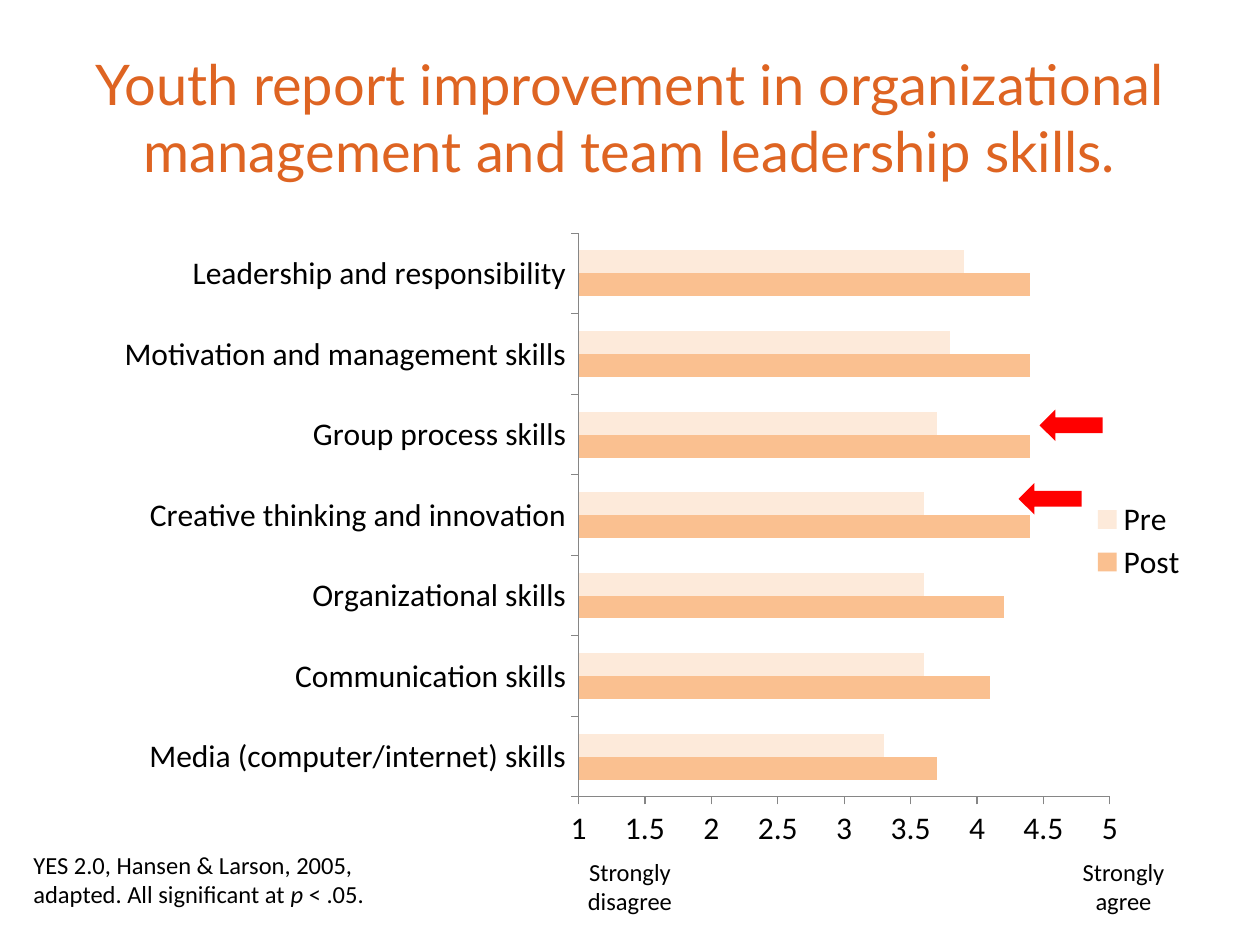
"""Build a slide comparing youth skill ratings before and after a program."""
from lxml import etree
from pptx import Presentation
from pptx.chart.data import CategoryChartData
from pptx.dml.color import RGBColor
from pptx.enum.chart import XL_CHART_TYPE, XL_LEGEND_POSITION, XL_TICK_MARK
from pptx.enum.shapes import MSO_SHAPE
from pptx.enum.text import MSO_ANCHOR, MSO_AUTO_SIZE, PP_ALIGN
from pptx.oxml.ns import qn
from pptx.util import Pt

BAR_CLUSTERED = XL_CHART_TYPE.BAR_CLUSTERED
LEGEND_RIGHT = XL_LEGEND_POSITION.RIGHT
TICK_OUTSIDE, TICK_NONE = XL_TICK_MARK.OUTSIDE, XL_TICK_MARK.NONE
RIGHT_ARROW = MSO_SHAPE.RIGHT_ARROW
TOP, MIDDLE = MSO_ANCHOR.TOP, MSO_ANCHOR.MIDDLE
FIT_SHAPE, FIT_NONE = MSO_AUTO_SIZE.SHAPE_TO_FIT_TEXT, MSO_AUTO_SIZE.NONE
LEFT, CENTER = PP_ALIGN.LEFT, PP_ALIGN.CENTER

ORANGE = RGBColor(0xDE, 0x64, 0x22)
BLACK = RGBColor(0, 0, 0)
RED = RGBColor(0xFF, 0, 0)
GRAY = RGBColor(0x86, 0x86, 0x86)
POST_COLOR = RGBColor(0xFA, 0xC0, 0x90)
PRE_COLOR = RGBColor(0xFD, 0xEA, 0xDA)

TITLE_FONT = {"name": "Lato", "size": Pt(32)}
NOTE_FONT = {"name": "Calibri", "size": Pt(14)}
CHART_FONT = {"name": "Calibri", "size": Pt(18)}

TITLE = "Youth report improvement in organizational management and team leadership skills."
TEXTS = [
    ((36, 21.6, 648, 90), [(TITLE, False)], TITLE_FONT, ORANGE, CENTER, MIDDLE, FIT_NONE),
    ((318, 486, 84, 41), [("Strongly disagree", False)], NOTE_FONT, BLACK, CENTER, TOP, FIT_SHAPE),
    ((600, 486, 84, 41), [("Strongly agree", False)], NOTE_FONT, BLACK, CENTER, TOP, FIT_SHAPE),
    ((12, 482, 240, 58),
     [("YES 2.0, Hansen & Larson, 2005, adapted. All significant at ", False),
      ("p", True), (" < .05.", False)],
     NOTE_FONT, BLACK, LEFT, TOP, FIT_SHAPE),
]
RATINGS = [
    ("Media (computer/internet) skills", 3.7, 3.3),
    ("Communication skills", 4.1, 3.6),
    ("Organizational skills", 4.2, 3.6),
    ("Creative thinking and innovation", 4.4, 3.6),
    ("Group process skills", 4.4, 3.7),
    ("Motivation and management skills", 4.4, 3.8),
    ("Leadership and responsibility", 4.4, 3.9),
]
SERIES = [("Post", POST_COLOR), ("Pre", PRE_COLOR)]
CHART_BOX = (60, 126, 660, 366)
PLOT_LAYOUT = {"layoutTarget": "inner", "xMode": "edge", "yMode": "edge",
               "x": 0.41, "y": 0.02, "w": 0.46, "h": 0.88}
LEGEND_LAYOUT = {"xMode": "edge", "yMode": "edge",
                 "x": 0.85, "y": 0.43, "w": 0.09, "h": 0.14}
ARROWS = [(582, 276), (594, 234)]
ARROW_SIZE = (36, 18)


def points(values):
    return [Pt(value) for value in values]


def apply_font(font, values, color):
    for name, value in values.items():
        setattr(font, name, value)
    font.color.rgb = color


def add_text(slide, box, runs, font_values, color, alignment, anchor, auto_size):
    frame = slide.shapes.add_textbox(*points(box)).text_frame
    frame.word_wrap = True
    frame.auto_size = auto_size
    frame.vertical_anchor = anchor
    paragraph = frame.paragraphs[0]
    paragraph.alignment = alignment
    for text, italic in runs:
        run = paragraph.add_run()
        run.text = text
        apply_font(run.font, font_values, color)
        run.font.italic = italic


def set_layout(element, position, values):
    for existing in element.findall(qn("c:layout")):
        element.remove(existing)
    layout = etree.Element(qn("c:layout"))
    manual = etree.SubElement(layout, qn("c:manualLayout"))
    for name, value in values.items():
        etree.SubElement(manual, qn(f"c:{name}")).set("val", str(value))
    element.insert(position, layout)


def add_ratings_chart(slide):
    categories, *columns = zip(*RATINGS)
    data = CategoryChartData()
    data.categories = categories
    for (name, _), values in zip(SERIES, columns):
        data.add_series(name, values)
    chart = slide.shapes.add_chart(BAR_CLUSTERED, *points(CHART_BOX), data).chart
    apply_font(chart.font, CHART_FONT, BLACK)
    chart.has_title = False
    plot = chart.plots[0]
    plot.gap_width = 150
    plot.vary_by_categories = False
    for series, (_, color) in zip(plot.series, SERIES):
        series.format.fill.solid()
        series.format.fill.fore_color.rgb = color
    for axis in (chart.category_axis, chart.value_axis):
        axis.has_major_gridlines = False
        axis.major_tick_mark = TICK_OUTSIDE
        axis.minor_tick_mark = TICK_NONE
        axis.format.line.color.rgb = GRAY
        axis.format.line.width = Pt(0.75)
    value_axis = chart.value_axis
    value_axis.minimum_scale, value_axis.maximum_scale = 1, 5
    value_axis.major_unit = 0.5
    chart.has_legend = True
    chart.legend.position = LEGEND_RIGHT
    chart.legend.include_in_layout = False
    chart_element = chart.element.find(qn("c:chart"))
    set_layout(chart_element.find(qn("c:plotArea")), 0, PLOT_LAYOUT)
    set_layout(chart_element.find(qn("c:legend")), 1, LEGEND_LAYOUT)


def add_arrow(slide, position):
    arrow = slide.shapes.add_shape(RIGHT_ARROW, *points(position + ARROW_SIZE))
    arrow.rotation = 180
    arrow.shadow.inherit = False
    arrow.fill.solid()
    arrow.fill.fore_color.rgb = RED
    arrow.line.fill.background()


def main():
    presentation = Presentation()
    presentation.slide_width, presentation.slide_height = Pt(720), Pt(540)
    slide = presentation.slides.add_slide(presentation.slide_layouts[6])
    title, *notes = TEXTS
    add_text(slide, *title)
    add_ratings_chart(slide)
    for note in notes:
        add_text(slide, *note)
    for position in ARROWS:
        add_arrow(slide, position)
    presentation.save("out.pptx")


if __name__ == "__main__":
    main()
